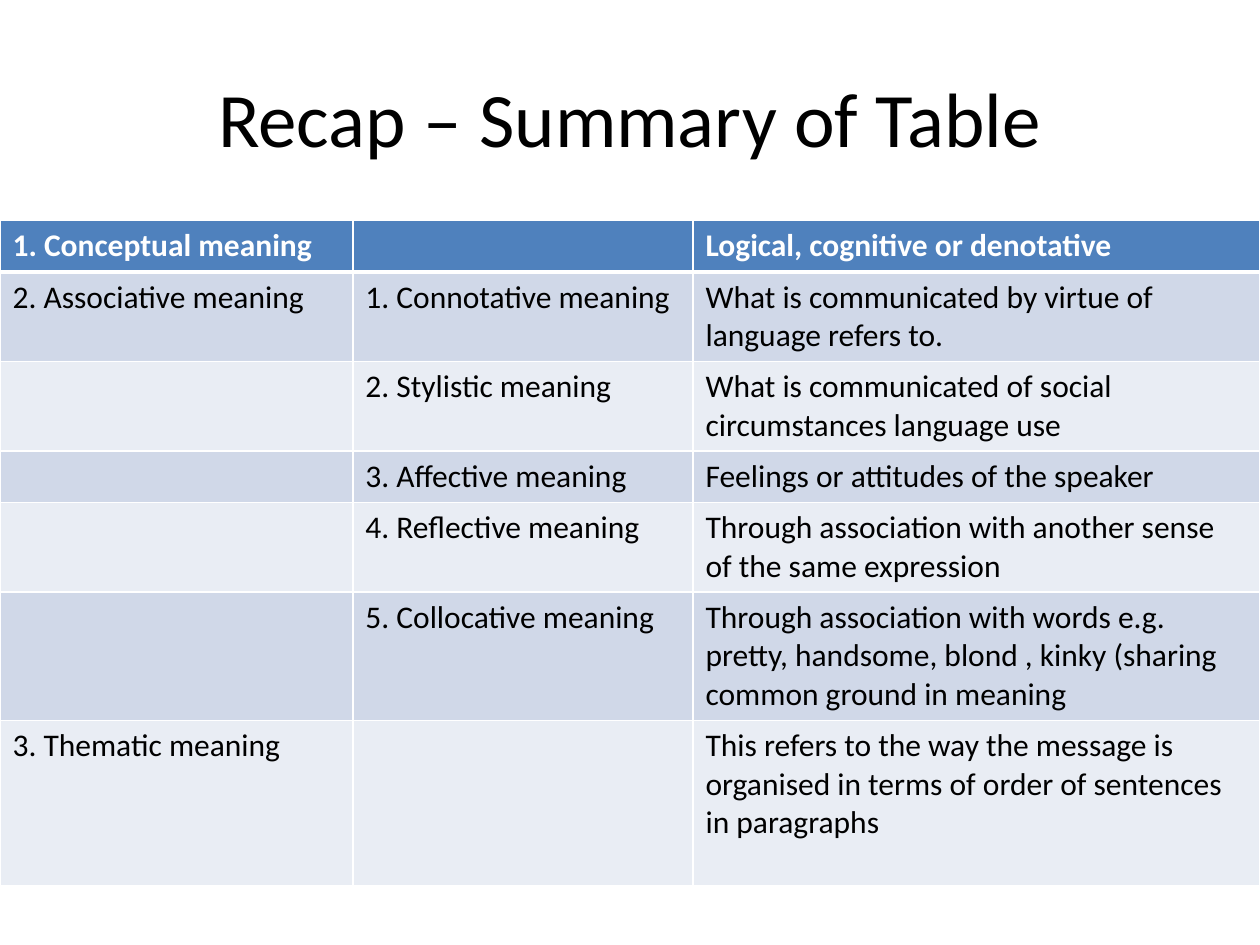
import pptx
import pptx.util
import pptx.dml.color
import pptx.enum.text
import pptx.oxml
import pptx.oxml.ns
from dataclasses import dataclass

Pt = pptx.util.Pt
Inches = pptx.util.Inches
RGB = pptx.dml.color.RGBColor.from_string
PP_ALIGN = pptx.enum.text.PP_ALIGN
MSO_ANCHOR = pptx.enum.text.MSO_ANCHOR


@dataclass(frozen=True)
class Theme:
    font: str = "Calibri"
    ink: str = "000000"
    light: str = "FFFFFF"
    header: str = "4F81BD"
    bands: tuple = ("D0D8E8", "E9EDF4")
    title_size: int = 44
    body_size: int = 18
    rule: int = 1
    header_rule: int = 3


def apply(obj, fmt):
    for name, value in fmt.items():
        setattr(obj, name, value)


class Deck:
    def __init__(self, theme, width=10, height=7.5):
        self.theme = theme
        self.prs = pptx.Presentation()
        apply(self.prs, {"slide_width": Inches(width), "slide_height": Inches(height)})
        self.s = self.prs.slides.add_slide(self.prs.slide_layouts[6])

    def box(self, x, y, w, h):
        """Turn shares of the slide's size into lengths."""
        sw, sh = self.prs.slide_width, self.prs.slide_height
        return [round(v) for v in (x * sw, y * sh, w * sw, h * sh)]

    def add_text(self, p, text, size, color, bold=False):
        r = p.add_run()
        r.text = text
        apply(r.font, {"name": self.theme.font, "size": Pt(size), "bold": bold})
        r.font.color.rgb = RGB(color)

    def title(self, text, area):
        tf = self.s.shapes.add_textbox(*self.box(*area)).text_frame
        apply(tf, {"word_wrap": True, "vertical_anchor": MSO_ANCHOR.MIDDLE})
        p = tf.paragraphs[0]
        p.alignment = PP_ALIGN.CENTER
        self.add_text(p, text, self.theme.title_size, self.theme.ink)

    def borders(self, cell, top, bottom):
        t = self.theme
        widths = {"lnL": t.rule, "lnR": t.rule, "lnT": top, "lnB": bottom}
        tcPr = cell._tc.get_or_add_tcPr()
        for tag, width in widths.items():
            tcPr.append(pptx.oxml.parse_xml(
                f'<a:{tag} {pptx.oxml.ns.nsdecls("a")} w="{Pt(width)}">'
                f'<a:solidFill><a:srgbClr val="{t.light}"/></a:solidFill></a:{tag}>'))

    def table(self, rows, area, col_shares, row_shares):
        """Column shares are of the slide's width, row shares of its height."""
        t = self.theme
        tbl = self.s.shapes.add_table(len(rows), len(col_shares), *self.box(*area)).table
        apply(tbl, {"first_row": True, "horz_banding": False})
        for col, share in zip(tbl.columns, col_shares):
            col.width = round(share * self.prs.slide_width)
        for i, (row, share, texts) in enumerate(zip(tbl.rows, row_shares, rows)):
            row.height = round(share * self.prs.slide_height)
            head = i == 0
            fill = t.header if head else t.bands[(i - 1) % 2]
            for cell, text in zip(row.cells, texts):
                self.borders(cell, t.header_rule if i == 1 else t.rule,
                             t.header_rule if head else t.rule)
                cell.fill.solid()
                cell.fill.fore_color.rgb = RGB(fill)
                p = cell.text_frame.paragraphs[0]
                if text:
                    self.add_text(p, text, t.body_size, t.light if head else t.ink, head)
                else:
                    p.font.size = Pt(t.body_size)


ROWS = [
    ("1. Conceptual meaning", "", "Logical, cognitive or denotative"),
    ("2. Associative meaning", "1. Connotative meaning",
     "What is communicated by virtue of language refers to."),
    ("", "2. Stylistic meaning",
     "What is communicated of social circumstances language use"),
    ("", "3. Affective meaning", "Feelings or attitudes of the speaker"),
    ("", "4. Reflective meaning",
     "Through association with another sense of the same expression"),
    ("", "5. Collocative meaning",
     "Through association with words e.g. pretty, handsome, blond , kinky "
     "(sharing common ground in meaning"),
    ("3. Thematic meaning", "",
     "This refers to the way the message is organised in terms of order of "
     "sentences in paragraphs"),
]
ROW_INCHES = [0.41, 0.71, 0.71, 0.41, 0.71, 1.02, 1.31]


def main():
    deck = Deck(Theme())
    deck.title("Recap – Summary of Table", (0.05, 0.04, 0.9, 1 / 6))
    row_shares = [h / 7.5 for h in ROW_INCHES]
    deck.table(ROWS, (0, 7 / 30, 1, sum(row_shares)), (0.28, 0.27, 0.45), row_shares)
    deck.prs.save("out.pptx")


if __name__ == "__main__":
    main()
